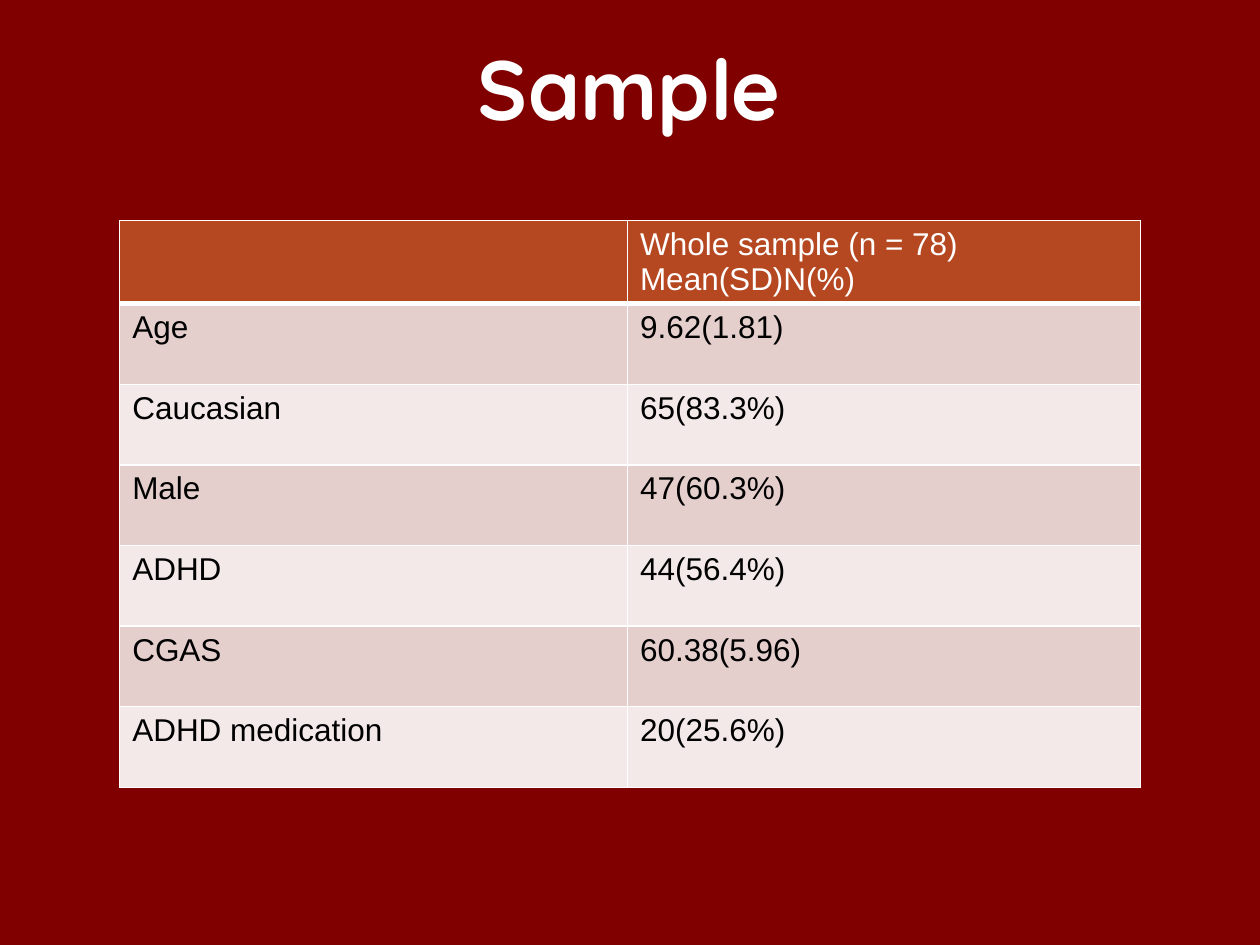
from dataclasses import dataclass

from lxml import etree
from pptx import Presentation
from pptx.dml.color import RGBColor
from pptx.enum.text import MSO_ANCHOR, PP_ALIGN
from pptx.oxml.ns import qn
from pptx.util import Inches, Pt

CENTER, LEFT = PP_ALIGN.CENTER, PP_ALIGN.LEFT
MIDDLE, TOP = MSO_ANCHOR.MIDDLE, MSO_ANCHOR.TOP
TITLE_ONLY = 5


@dataclass(frozen=True)
class Theme:
    background: str = "800000"
    light: str = "FFFFFF"
    dark: str = "000000"
    header: str = "B54721"
    bands: tuple[str, str] = ("E5CFCD", "F3E9E8")
    title_font: str = "Quicksand"
    body_font: str = "Arial"
    title_size: int = 48
    body_size: int = 18
    thin: int = 1
    thick: int = 3


@dataclass(frozen=True)
class Measure:
    label: str
    value: str


THEME = Theme()
HEADER = Measure("", "Whole sample (n = 78)\nMean(SD)N(%)")
MEASURES = [
    Measure("Age", "9.62(1.81)"),
    Measure("Caucasian", "65(83.3%)"),
    Measure("Male", "47(60.3%)"),
    Measure("ADHD", "44(56.4%)"),
    Measure("CGAS", "60.38(5.96)"),
    Measure("ADHD medication", "20(25.6%)"),
]
COLUMN_WIDTHS = (4.03, 4.07)
ROW_HEIGHT = 0.64


def write(tf, text: str, *, color: str, font: str = THEME.body_font,
          size: int = THEME.body_size, bold: bool = False,
          align=LEFT, spacing: float = 1.0) -> None:
    """Fill a text frame, one paragraph for each line of text."""
    tf.text = text
    for p in tf.paragraphs:
        p.alignment, p.line_spacing = align, spacing
        p.font.size = Pt(size)
        for r in p.runs:
            r.font.name, r.font.size, r.font.bold = font, Pt(size), bold
            r.font.color.rgb = RGBColor.from_string(color)


def set_borders(cell, color: str, **widths: int) -> None:
    """Draw cell edges; widths in points are keyed L, R, T and B."""
    props = cell._tc.get_or_add_tcPr()
    for i, (side, width) in enumerate(widths.items()):
        line = etree.Element(qn(f"a:ln{side}"), w=str(Pt(width)))
        fill = etree.SubElement(line, qn("a:solidFill"))
        etree.SubElement(fill, qn("a:srgbClr"), val=color)
        props.insert(i, line)


def add_title(s, text: str) -> None:
    sp = s.shapes.title
    sp.left, sp.top = Inches(0.85), Inches(0.1)
    sp.width, sp.height = Inches(8.29), Inches(1.25)
    sp.text_frame.vertical_anchor = MIDDLE
    write(sp.text_frame, text, color=THEME.light, font=THEME.title_font,
          size=THEME.title_size, bold=True, align=CENTER, spacing=0.95)


def add_sample_table(s, rows: list[Measure]) -> None:
    table = s.shapes.add_table(
        len(rows), len(COLUMN_WIDTHS), Inches(0.95), Inches(1.75),
        Inches(sum(COLUMN_WIDTHS)), Inches(ROW_HEIGHT * len(rows))).table
    for column, width in zip(table.columns, COLUMN_WIDTHS):
        column.width = Inches(width)
    for i, measure in enumerate(rows):
        table.rows[i].height = Inches(ROW_HEIGHT)
        is_header = i == 0
        fill = THEME.header if is_header else THEME.bands[(i - 1) % 2]
        for cell, text in zip(table.rows[i].cells, (measure.label, measure.value)):
            cell.vertical_anchor = TOP
            cell.fill.solid()
            cell.fill.fore_color.rgb = RGBColor.from_string(fill)
            write(cell.text_frame, text,
                  color=THEME.light if is_header else THEME.dark)
            set_borders(cell, THEME.light, L=THEME.thin, R=THEME.thin,
                        T=THEME.thick if i == 1 else THEME.thin,
                        B=THEME.thick if is_header else THEME.thin)


def main() -> None:
    prs = Presentation()
    prs.slide_width, prs.slide_height = Inches(10), Inches(7.5)
    s = prs.slides.add_slide(prs.slide_layouts[TITLE_ONLY])
    s.background.fill.solid()
    s.background.fill.fore_color.rgb = RGBColor.from_string(THEME.background)
    add_title(s, "Sample")
    add_sample_table(s, [HEADER, *MEASURES])
    prs.save("out.pptx")


if __name__ == "__main__":
    main()
